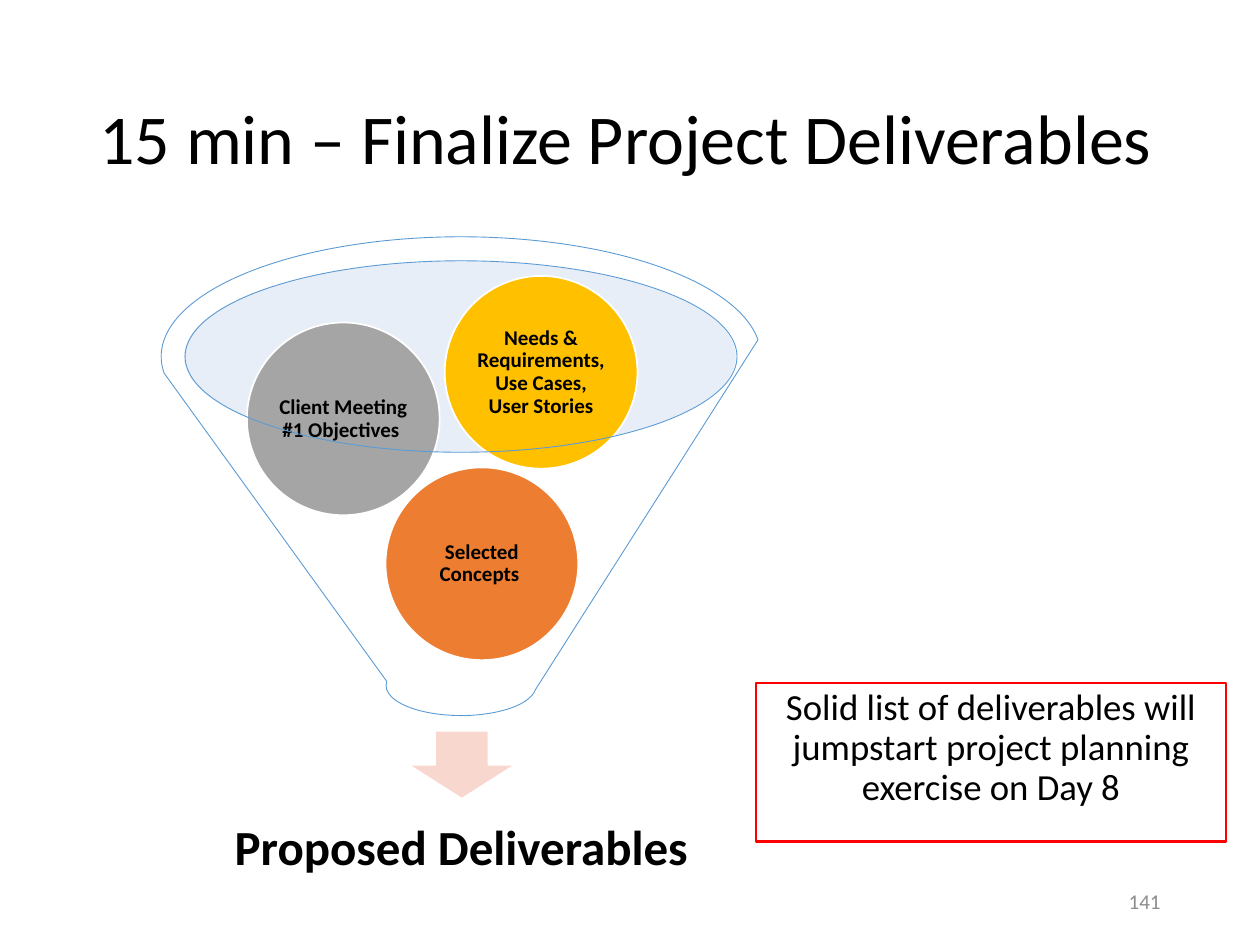
"""Build the project deliverables funnel slide."""
import pptx
import pptx.dml.color
import pptx.enum.shapes
import pptx.enum.text
import pptx.oxml
import pptx.oxml.ns
import pptx.util

COLORS = {
    "text": "000000", "number": "8C8C8C", "border": "FF0000", "white": "FFFFFF",
    "mouth": "C4D5EB", "arrow": "F8D7CE", "funnel": "5B9BD5",
    "concepts": "ED7D31", "objectives": "A5A5A5", "needs": "FFC000",
}
SHAPES = pptx.enum.shapes.MSO_SHAPE
ALIGN = pptx.enum.text.PP_ALIGN
ANCHOR = pptx.enum.text.MSO_ANCHOR

deck = pptx.Presentation()
deck.slide_width = pptx.util.Inches(10)
deck.slide_height = pptx.util.Inches(7.5)
column = deck.slide_width / 100
row = deck.slide_height / 75
page = deck.slides.add_slide(deck.slide_layouts[6])


def add_shape(kind, left, top, width, height, fill=None, line=None, weight=1):
    shape = page.shapes.add_shape(
        kind, round(left * column), round(top * row), round(width * column), round(height * row))
    shape.shadow.inherit = False
    if fill:
        shape.fill.solid()
        shape.fill.fore_color.rgb = pptx.dml.color.RGBColor.from_string(COLORS[fill])
    else:
        shape.fill.background()
    if line:
        shape.line.color.rgb = pptx.dml.color.RGBColor.from_string(COLORS[line])
        shape.line.width = pptx.util.Pt(weight)
    else:
        shape.line.fill.background()
    return shape


def write(box, text, size, align=ALIGN.CENTER, anchor=ANCHOR.MIDDLE, bold=False,
          color="text", spacing=0.9, inset=None):
    frame = box.text_frame
    frame.word_wrap = True
    frame.vertical_anchor = anchor
    if inset is not None:
        frame.margin_left = frame.margin_right = pptx.util.Inches(inset)
        frame.margin_top = frame.margin_bottom = pptx.util.Inches(inset)
    para = frame.paragraphs[0]
    para.text = text
    para.alignment = align
    para.line_spacing = spacing
    para.font.name = "Calibri"
    para.font.size = pptx.util.Pt(size)
    para.font.bold = bold
    para.font.color.rgb = pptx.dml.color.RGBColor.from_string(COLORS[color])


title = add_shape(SHAPES.RECTANGLE, 6.9, 4, 86.2, 14.5)
write(title, "15 min – Finalize Project Deliverables", 40, align=ALIGN.LEFT)

note = add_shape(SHAPES.RECTANGLE, 60, 54.2, 37.3, 12.6, line="border", weight=1.5)
write(note, "Solid list of deliverables will jumpstart project planning exercise on Day 8",
      21, anchor=ANCHOR.TOP)

number = add_shape(SHAPES.RECTANGLE, 70.6, 69.5, 22.5, 4)
write(number, "141", 12, align=ALIGN.RIGHT, color="number", spacing=1)

mouth = add_shape(SHAPES.OVAL, 14.6, 20.7, 43.8, 15.2, fill="mouth")
mouth_color = next(mouth.element.spPr.iter(pptx.oxml.ns.qn("a:srgbClr")))
mouth_color.append(pptx.oxml.parse_xml(
    f'<a:alpha {pptx.oxml.ns.nsdecls("a")} val="40000"/>'))

add_shape(SHAPES.DOWN_ARROW, 32.4, 58, 8.5, 5.4, fill="arrow", line="white")
result = add_shape(SHAPES.RECTANGLE, 16.2, 62.3, 40.8, 10.2)
write(result, "Proposed Deliverables", 28, bold=True, inset=0.22)

inputs = [
    ("Selected Concepts ", "concepts", 30.6, 37.1),
    ("Client Meeting #1 Objectives ", "objectives", 19.6, 25.6),
    ("Needs & Requirements, Use Cases, User Stories", "needs", 35.3, 21.9),
]
for label, fill, left, top in inputs:
    circle = add_shape(SHAPES.OVAL, left, top, 15.3, 15.3, fill=fill, line="white")
    write(circle, label, 12, bold=True, inset=0.02)

add_shape(SHAPES.FUNNEL, 12.8, 18.8, 47.6, 38, line="funnel", weight=0.5)

deck.save("out.pptx")
